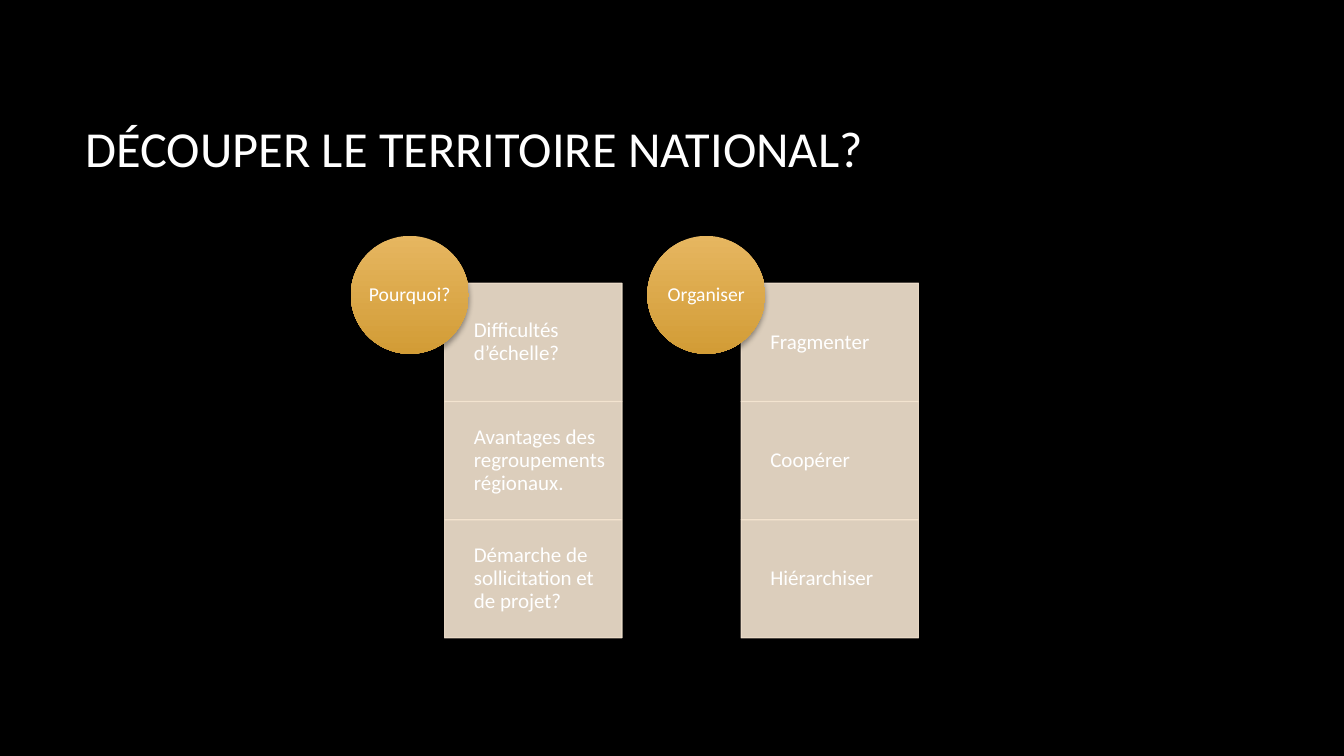
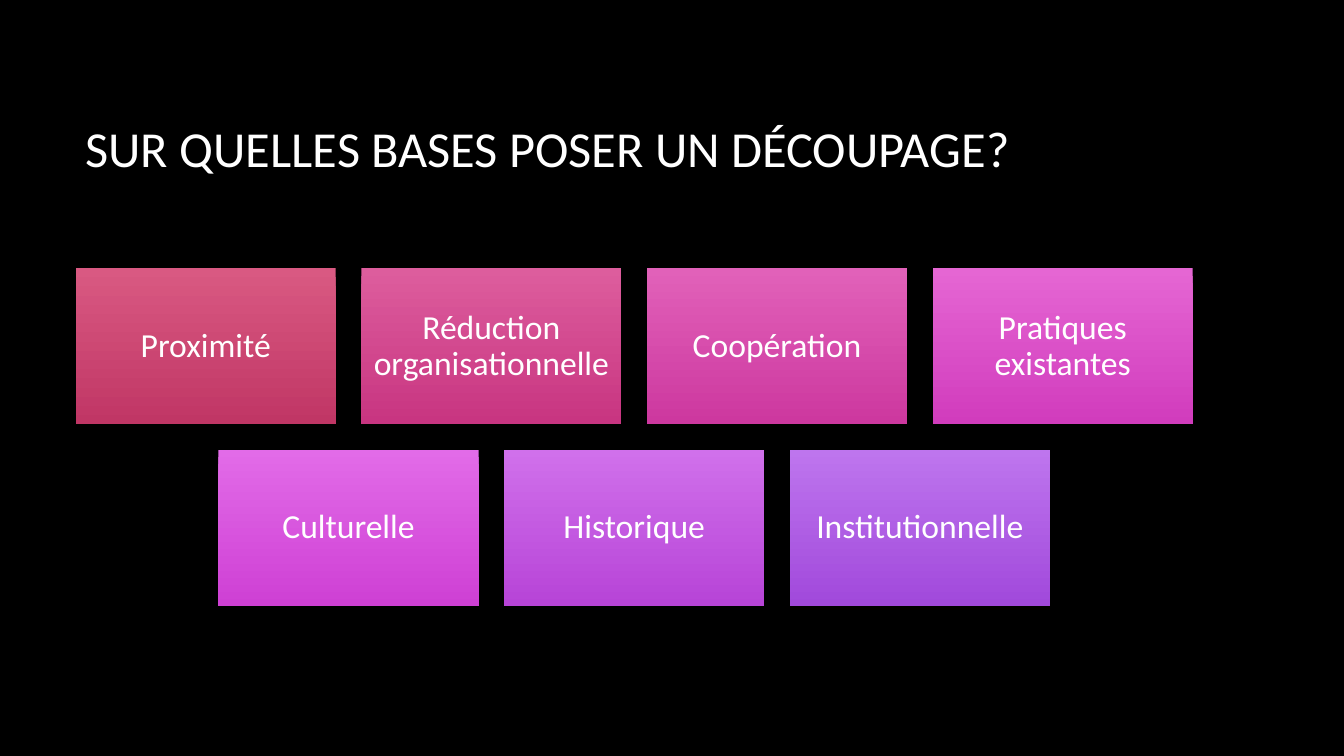
from lxml.etree import SubElement
from pptx import Presentation
from pptx.dml.color import RGBColor
from pptx.enum.shapes import MSO_SHAPE as Preset
from pptx.enum.text import MSO_ANCHOR as Anchor, PP_ALIGN as Align
from pptx.oxml.ns import qn
from pptx.util import Inches, Pt

FONT = "Calibri"
BLACK = "000000"
WHITE = "FFFFFF"
CREAM = "F5E5D1"
GOLD = ("E6B660", "D29C36")
CREAM_OPACITY = 90

MARGIN = 0.75
CONTENT_WIDTH = 11.08

COLUMN_LEFT = 3.48
COLUMN_PITCH = 2.94
BADGE_TOP = 2.34
BADGE_SIZE = 1.17
CELL_OFFSET = 0.93
CELL_TOP = 2.81
CELL_WIDTH = 1.76
CELL_HEIGHT = 3.52 / 3

TILE_TOP = 2.66
TILE_WIDTH = 2.58
TILE_HEIGHT = 1.55
TILES_PER_ROW = 4
TILE_GAP = (CONTENT_WIDTH - TILES_PER_ROW * TILE_WIDTH) / (TILES_PER_ROW - 1)

COLUMNS = [
    ("Pourquoi?", [
        "Difficultés d’échelle?",
        "Avantages des regroupements régionaux.",
        "Démarche de sollicitation et de projet?",
    ]),
    ("Organiser", ["Fragmenter", "Coopérer", "Hiérarchiser"]),
]

CRITERIA = [
    ("Proximité", ("D95982", "C03665")),
    ("Réduction organisationnelle", ("DD5D9D", "C83581")),
    ("Coopération", ("E161B9", "CD389F")),
    ("Pratiques existantes", ("E566D3", "D13CBD")),
    ("Culturelle", ("E26BE8", "CE40D4")),
    ("Historique", ("D070EB", "B744D7")),
    ("Institutionnelle", ("BE75EE", "A149DB")),
]


def rgb(hex_code):
    """Turn a hex string into a colour."""
    return RGBColor.from_string(hex_code)


def write(shape, text, size, align, insets, spacing=0.9):
    """Put one styled, vertically centred paragraph in a shape."""
    frame = shape.text_frame
    frame.word_wrap = True
    frame.vertical_anchor = Anchor.MIDDLE
    (frame.margin_left, frame.margin_top,
     frame.margin_right, frame.margin_bottom) = map(Inches, insets)
    paragraph = frame.paragraphs[0]
    paragraph.text = text
    paragraph.alignment = align
    paragraph.line_spacing = spacing
    paragraph.font.name = FONT
    paragraph.font.size = Pt(size)
    paragraph.font.color.rgb = rgb(WHITE)


def set_opacity(fill, percent):
    """Make a solid fill partly transparent."""
    colour = fill._xPr.find(qn("a:solidFill"))[0]
    SubElement(colour, qn("a:alpha"), val=str(percent * 1000))


def cast_shadow(shape, opacity, blur):
    """Give a shape a soft shadow falling straight down."""
    shape.shadow.inherit = False
    effects = shape._element.spPr.find(qn("a:effectLst"))
    shadow = SubElement(effects, qn("a:outerShdw"), blurRad=str(Pt(blur)),
                        dist=str(Pt(3)), dir="5400000", rotWithShape="0")
    colour = SubElement(shadow, qn("a:srgbClr"), val=BLACK)
    SubElement(colour, qn("a:alpha"), val=str(opacity * 1000))


def add_block(slide, preset, left, top, width, height):
    """Add a preset shape placed in inches."""
    return slide.shapes.add_shape(preset, *map(Inches, (left, top, width, height)))


def fill_gradient(shape, colours):
    """Fill an unlined shape with a gradient from top to bottom."""
    shape.line.fill.background()
    shape.fill.gradient()
    shape.fill.gradient_angle = 270
    for position, (stop, colour) in enumerate(zip(shape.fill.gradient_stops, colours)):
        stop.color.rgb = rgb(colour)
        stop.position = position


def add_titled_slide(prs, title):
    """Add a blank-layout slide with its title."""
    slide = prs.slides.add_slide(prs.slide_layouts[6])
    heading = slide.shapes.add_textbox(
        *map(Inches, (MARGIN, 0.67, CONTENT_WIDTH, 1.59)))
    write(heading, title, 36, Align.LEFT, (0.1, 0.05, 0.1, 0.05), 1.0)
    return slide


def add_cell(slide, left, top, text):
    """Add one cream cell of a column."""
    cell = add_block(slide, Preset.RECTANGLE, left, top, CELL_WIDTH, CELL_HEIGHT)
    cell.fill.solid()
    cell.fill.fore_color.rgb = rgb(CREAM)
    set_opacity(cell.fill, CREAM_OPACITY)
    cell.line.color.rgb = rgb(CREAM)
    set_opacity(cell.line.fill, CREAM_OPACITY)
    cell.line.width = Pt(0.75)
    cast_shadow(cell, 35, 4)
    write(cell, text, 15, Align.LEFT, (0.29, 0.12, 0.12, 0.12))


def add_column(slide, left, label, entries):
    """Add stacked cells with a round badge over their corner."""
    for row, entry in enumerate(entries):
        add_cell(slide, left + CELL_OFFSET, CELL_TOP + row * CELL_HEIGHT, entry)
    badge = add_block(slide, Preset.OVAL, left, BADGE_TOP, BADGE_SIZE, BADGE_SIZE)
    fill_gradient(badge, GOLD)
    cast_shadow(badge, 35, 4)
    write(badge, label, 14, Align.CENTER, (0, 0, 0, 0))


def add_tile_row(slide, top, criteria):
    """Add a row of gradient tiles centred in the content width."""
    pitch = TILE_WIDTH + TILE_GAP
    row_width = len(criteria) * pitch - TILE_GAP
    start = MARGIN + (CONTENT_WIDTH - row_width) / 2
    for index, (label, colours) in enumerate(criteria):
        tile = add_block(slide, Preset.RECTANGLE, start + index * pitch, top,
                         TILE_WIDTH, TILE_HEIGHT)
        fill_gradient(tile, colours)
        cast_shadow(tile, 65, 5)
        write(tile, label, 24, Align.CENTER, (0.1, 0.1, 0.1, 0.1))


def main():
    """Build and save the two slides."""
    prs = Presentation()
    prs.slide_width, prs.slide_height = Inches(13.33), Inches(7.5)
    backdrop = prs.slide_master.background.fill
    backdrop.solid()
    backdrop.fore_color.rgb = rgb(BLACK)

    division = add_titled_slide(prs, "DÉCOUPER LE TERRITOIRE NATIONAL?")
    for index, (label, entries) in enumerate(COLUMNS):
        add_column(division, COLUMN_LEFT + index * COLUMN_PITCH, label, entries)

    bases = add_titled_slide(prs, "SUR QUELLES BASES POSER UN DÉCOUPAGE?")
    for row, first in enumerate(range(0, len(CRITERIA), TILES_PER_ROW)):
        add_tile_row(bases, TILE_TOP + row * (TILE_HEIGHT + TILE_GAP),
                     CRITERIA[first:first + TILES_PER_ROW])

    prs.save("out.pptx")


if __name__ == "__main__":
    main()
